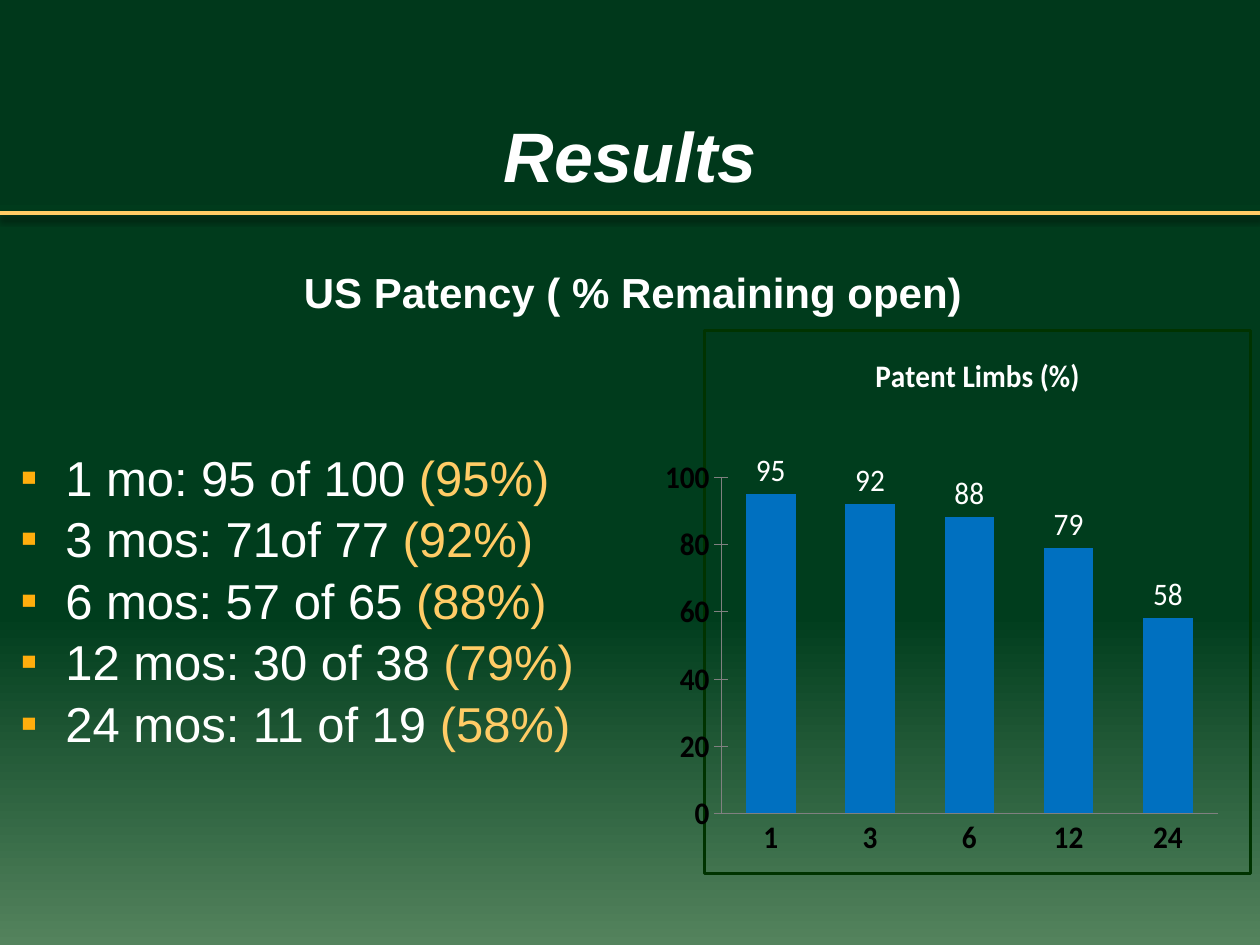
from lxml import etree
from pptx import Presentation
from pptx.chart.data import CategoryChartData
from pptx.dml.color import RGBColor
from pptx.enum.chart import XL_CHART_TYPE, XL_LABEL_POSITION, XL_TICK_MARK
from pptx.enum.shapes import MSO_CONNECTOR
from pptx.enum.text import MSO_ANCHOR, PP_ALIGN
from pptx.oxml import parse_xml
from pptx.oxml.ns import nsdecls, qn
from pptx.util import Emu, Pt

COLUMN = XL_CHART_TYPE.COLUMN_CLUSTERED
OUTSIDE = XL_LABEL_POSITION.OUTSIDE_END
NO_TICK, CROSS_TICK = XL_TICK_MARK.NONE, XL_TICK_MARK.CROSS
STRAIGHT = MSO_CONNECTOR.STRAIGHT
TOP, BOTTOM = MSO_ANCHOR.TOP, MSO_ANCHOR.BOTTOM
LEFT, CENTER = PP_ALIGN.LEFT, PP_ALIGN.CENTER

WHITE = RGBColor(0xFF, 0xFF, 0xFF)
BLACK = RGBColor(0x00, 0x00, 0x00)
GOLD = RGBColor(0xFF, 0xCC, 0x66)
AMBER = RGBColor(0xFF, 0xAE, 0x0D)
GRAY = RGBColor(0x80, 0x80, 0x80)
BLUE = RGBColor(0x00, 0x70, 0xC0)
DARK_GREEN = RGBColor(0x00, 0x33, 0x00)
BACKGROUND = [(0, RGBColor(0x00, 0x38, 0x1B)), (65, RGBColor(0x00, 0x3D, 0x1D)),
              (100, RGBColor(0x54, 0x83, 0x5D))]

PATENCY = [("1", "1 mo: 95 of 100 ", 95), ("3", "3 mos: 71of 77 ", 92),
           ("6", "6 mos: 57 of 65 ", 88), ("12", "12 mos: 30 of 38 ", 79),
           ("24", "24 mos: 11 of 19 ", 58)]


def px(value):
    return Emu(round(value * 914400 / 126))


class Slide:
    font = "Arial"
    chart_font = "Calibri"

    def __init__(self, deck):
        self.page = deck.slides.add_slide(deck.slide_layouts[6])

    def background(self, stops):
        fill = self.page.background.fill
        fill.gradient()
        fill.gradient_angle = 270
        stop_list = self.page._element.find(".//" + qn("a:gsLst"))
        for old_stop in list(stop_list):
            stop_list.remove(old_stop)
        for position, color in stops:
            stop = etree.SubElement(stop_list, qn("a:gs"), pos=str(position * 1000))
            etree.SubElement(stop, qn("a:srgbClr"), val=str(color))

    def rule(self, x1, y1, x2, y2, color, width):
        line = self.page.shapes.add_connector(STRAIGHT, px(x1), px(y1), px(x2), px(y2))
        line.line.color.rgb = color
        line.line.width = Pt(width)
        line._element.spPr.append(parse_xml(
            f'<a:effectLst {nsdecls("a")}><a:outerShdw blurRad="{Pt(3.8)}" dist="{Pt(3)}" '
            'dir="5400000" rotWithShape="0"><a:srgbClr val="000000"><a:alpha val="48000"/>'
            '</a:srgbClr></a:outerShdw></a:effectLst>'))

    def text(self, x, y, width, height, lines, size, align=CENTER, anchor=TOP,
             bold=False, italic=False, bullet=None, gap=0):
        """Each line is a list of (text, color) spans."""
        box = self.page.shapes.add_textbox(px(x), px(y), px(width), px(height))
        frame = box.text_frame
        frame.word_wrap = True
        frame.vertical_anchor = anchor
        for index, spans in enumerate(lines):
            para = frame.paragraphs[0] if index == 0 else frame.add_paragraph()
            para.alignment = align
            para.space_after = Pt(gap)
            if bullet:
                self.bullet(para, bullet)
            for words, color in spans:
                span = para.add_run()
                span.text = words
                span.font.name = self.font
                span.font.size = Pt(size)
                span.font.bold = bold
                span.font.italic = italic
                span.font.color.rgb = color

    def bullet(self, para, color):
        properties = para._p.get_or_add_pPr()
        properties.set("marL", str(px(58)))
        properties.set("indent", str(px(-45)))
        bullet_color = etree.SubElement(properties, qn("a:buClr"))
        etree.SubElement(bullet_color, qn("a:srgbClr"), val=str(color))
        etree.SubElement(properties, qn("a:buFont"), typeface=self.font)
        etree.SubElement(properties, qn("a:buChar"), char="▪")

    def style(self, font, color, bold):
        font.name = self.chart_font
        font.size = Pt(18)
        font.bold = bold
        font.color.rgb = color

    def column_chart(self, x, y, width, height, title, categories, values, layout):
        data = CategoryChartData()
        data.categories = categories
        data.add_series("Series 1", values)
        chart = self.page.shapes.add_chart(
            COLUMN, px(x), px(y), px(width), px(height), data).chart
        self.style(chart.font, BLACK, True)
        chart.has_legend = False

        # Title
        chart.has_title = True
        chart.chart_title.include_in_layout = False
        span = chart.chart_title.text_frame.paragraphs[0].add_run()
        span.text = title
        self.style(span.font, WHITE, True)

        # Axes
        value_axis = chart.value_axis
        value_axis.minimum_scale, value_axis.maximum_scale = 0, 100
        value_axis.major_unit = 20
        for axis, tick in ((chart.category_axis, NO_TICK), (value_axis, CROSS_TICK)):
            axis.has_major_gridlines = False
            axis.major_tick_mark = tick
            axis.minor_tick_mark = NO_TICK
            axis.format.line.color.rgb = GRAY
            axis.format.line.width = Pt(0.25)
            self.style(axis.tick_labels.font, BLACK, True)

        # Columns and their values
        plot = chart.plots[0]
        plot.gap_width = 100
        plot.vary_by_categories = False
        series = plot.series[0]
        series.format.fill.solid()
        series.format.fill.fore_color.rgb = BLUE
        labels = series.data_labels
        labels.show_value = True
        labels.position = OUTSIDE
        self.style(labels.font, WHITE, False)

        # Border and plot position
        chart_part = chart._chartSpace.find(qn("c:chart"))
        chart_part.addnext(parse_xml(
            f'<c:spPr {nsdecls("c", "a")}><a:noFill/><a:ln w="{Pt(2)}"><a:solidFill>'
            f'<a:srgbClr val="{DARK_GREEN}"/></a:solidFill></a:ln></c:spPr>'))
        area = chart_part.find(qn("c:plotArea"))
        for old_layout in area.findall(qn("c:layout")):
            area.remove(old_layout)
        places = '<c:xMode val="edge"/><c:yMode val="edge"/>' + "".join(
            f'<c:{key} val="{value}"/>' for key, value in zip("xywh", layout))
        area.insert(0, parse_xml(
            f'<c:layout {nsdecls("c")}><c:manualLayout><c:layoutTarget val="inner"/>'
            f'{places}</c:manualLayout></c:layout>'))


def main():
    deck = Presentation()
    deck.slide_width, deck.slide_height = px(1260), px(945)
    slide = Slide(deck)
    slide.background(BACKGROUND)

    # Heading
    slide.rule(0, 213, 1260, 213, GOLD, 2.25)
    slide.text(126, 44, 1008, 159, [[("Results", WHITE)]], 40,
               anchor=BOTTOM, bold=True, italic=True)
    slide.text(129, 260, 1008, 81, [[("US Patency ( % Remaining open)", WHITE)]], 24,
               bold=True)

    # Patency by month
    lines = [[(words, WHITE), (f"({percent}%)", GOLD)] for _, words, percent in PATENCY]
    slide.text(-5, 441, 690, 305, lines, 28, align=LEFT, bullet=AMBER, gap=1.5)
    slide.column_chart(665, 329, 587, 546, "Patent Limbs (%)",
                       [month for month, _, _ in PATENCY],
                       [percent for _, _, percent in PATENCY],
                       (0.03, 0.27, 0.91, 0.62))

    deck.save("out.pptx")


if __name__ == "__main__":
    main()
